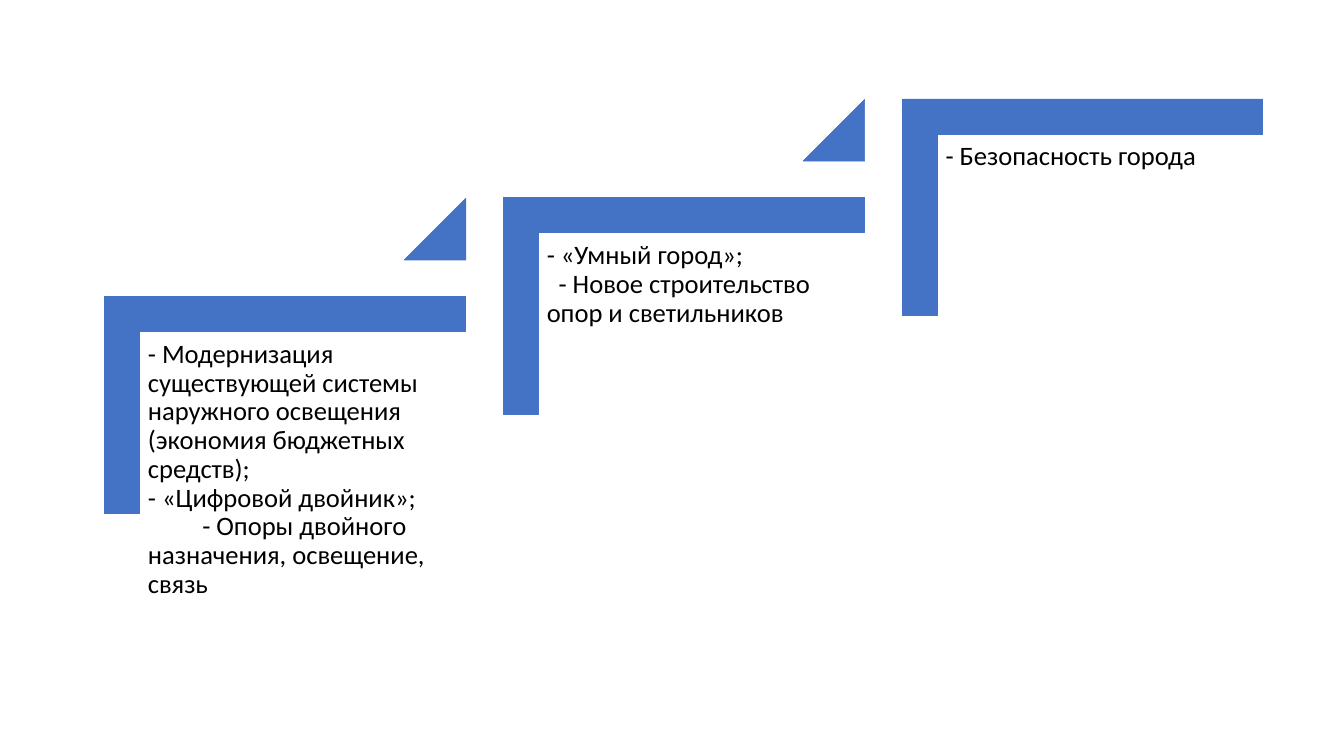
from dataclasses import dataclass

from pptx import Presentation
from pptx.dml.color import RGBColor
from pptx.enum.shapes import MSO_SHAPE
from pptx.util import Cm, Pt

CORNER = MSO_SHAPE.CORNER
TRIANGLE = MSO_SHAPE.ISOSCELES_TRIANGLE
BLUE = RGBColor(0x44, 0x72, 0xC4)
BLACK = RGBColor(0, 0, 0)

# Staircase geometry in centimetres: each step moves right and up
STEP_RIGHT, STEP_UP = 10.05, 2.49
CORNER_BOX = (4.45, 5.66, 5.46, 9.09)
TEXT_BOX = (3.53, 8.38, 8.2, 7.19)
TRIANGLE_BOX = (10.19, 5.0, 1.55, 1.55)


@dataclass
class Item:
    text: str
    indent: float = 0


STEPS = [
    [
        Item("- Модернизация существующей системы наружного освещения "
             "(экономия бюджетных средств);"),
        Item("- «Цифровой двойник»;"),
        Item("- Опоры двойного назначения, освещение, связь", 1.37),
    ],
    [
        Item("- «Умный город»;"),
        Item("- Новое строительство опор и светильников", 0.3),
    ],
    [Item("- Безопасность города")],
]


def place(box: tuple, step: int) -> list:
    left, top, width, height = box
    return [Cm(v) for v in (left + step * STEP_RIGHT, top - step * STEP_UP, width, height)]


def add_blue_shape(slide, kind, box: tuple, step: int, adjustments: list, rotation: float = 0) -> None:
    sp = slide.shapes.add_shape(kind, *place(box, step))
    for i, value in enumerate(adjustments):
        sp.adjustments[i] = value
    sp.rotation = rotation
    sp.shadow.inherit = False
    sp.fill.solid()
    sp.fill.fore_color.rgb = BLUE
    sp.line.color.rgb = BLUE
    sp.line.width = Pt(0.5)


def add_items(slide, step: int, items: list[Item]) -> None:
    tf = slide.shapes.add_textbox(*place(TEXT_BOX, step)).text_frame
    tf.word_wrap = True
    tf.margin_left = tf.margin_right = tf.margin_top = tf.margin_bottom = Cm(0.2)
    for i, item in enumerate(items):
        p = tf.add_paragraph() if i else tf.paragraphs[0]
        p.text = item.text
        p.line_spacing = 0.9
        if item.indent:
            p._p.get_or_add_pPr().set("indent", str(Cm(item.indent)))
        p.font.name = "Calibri"
        p.font.size = Pt(19)
        p.font.color.rgb = BLACK


def main() -> None:
    prs = Presentation()
    prs.slide_width, prs.slide_height = Cm(33.87), Cm(19.05)
    slide = prs.slides.add_slide(prs.slide_layouts[6])

    # Steps from lower left to upper right, with a triangle between neighbours
    for step, items in enumerate(STEPS):
        add_blue_shape(slide, CORNER, CORNER_BOX, step, [0.161, 0.161], 90)
        add_items(slide, step, items)
        if step < len(STEPS) - 1:
            add_blue_shape(slide, TRIANGLE, TRIANGLE_BOX, step, [1])

    prs.save("out.pptx")


if __name__ == "__main__":
    main()
